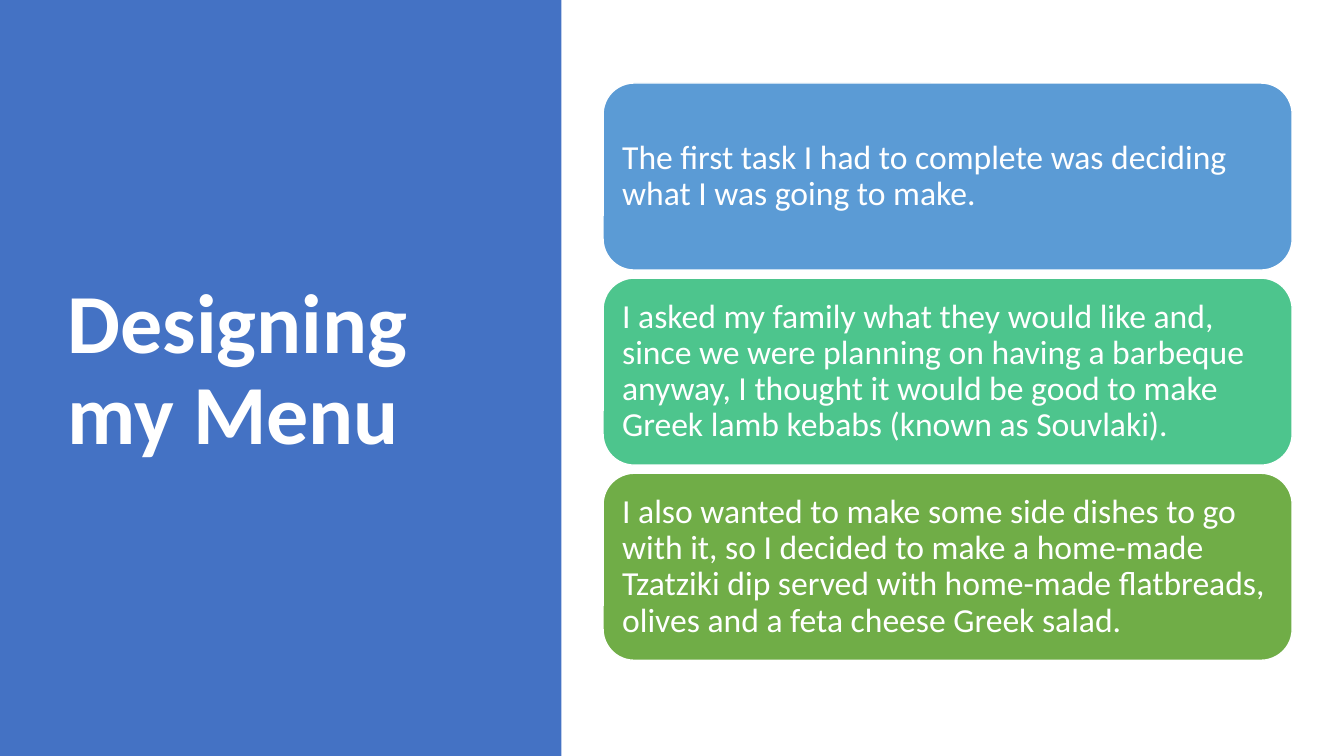
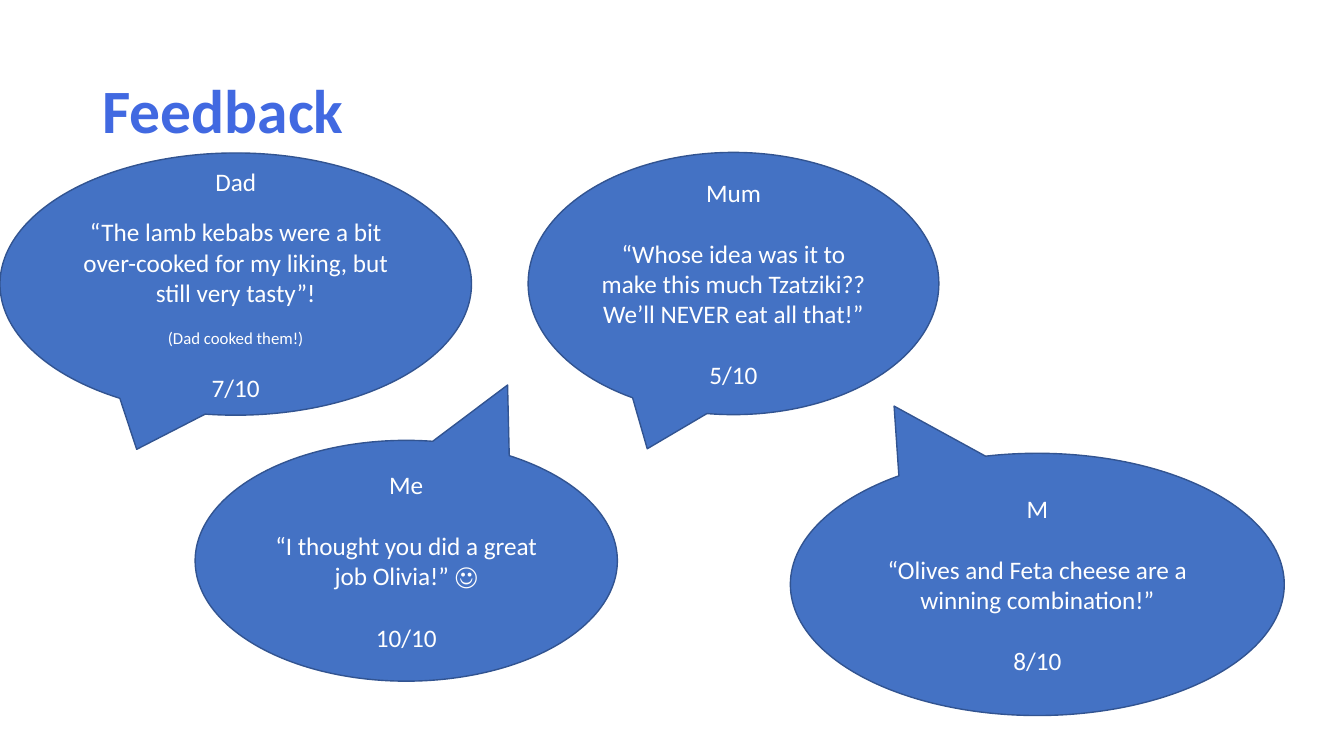
from pptx import Presentation
from pptx.dml.color import RGBColor
from pptx.enum.shapes import MSO_SHAPE
from pptx.enum.text import MSO_ANCHOR, PP_ALIGN
from pptx.util import Pt

BLUE = RGBColor(0x44, 0x72, 0xC4)
DARK_BLUE = RGBColor(0x32, 0x54, 0x91)
ROYAL_BLUE = RGBColor(0x41, 0x69, 0xE1)
SKY = RGBColor(0x5B, 0x9B, 0xD5)
MINT = RGBColor(0x4D, 0xC5, 0x8D)
GREEN = RGBColor(0x70, 0xAD, 0x47)
WHITE = RGBColor(0xFF, 0xFF, 0xFF)
FONT = "Calibri"
SLIDE_WIDTH, SLIDE_HEIGHT = 960, 540

MENU_STEPS = [
    ("The first task I had to complete was deciding what I was going to make.", SKY),
    ("I asked my family what they would like and, since we were planning on having "
     "a barbeque anyway, I thought it would be good to make Greek lamb kebabs "
     "(known as Souvlaki).", MINT),
    ("I also wanted to make some side dishes to go with it, so I decided to make a "
     "home-made Tzatziki dip served with home-made flatbreads, olives and a feta "
     "cheese Greek salad.", GREEN),
]
STEP_LEFT, STEP_TOP, STEP_WIDTH, STEP_HEIGHT, STEP_GAP = 430.8, 59.3, 492.2, 133.6, 5.76

BODY_SIZE, NOTE_SIZE = 18, 12
LINE_GAP, NOTE_GAP, SCORE_GAP = 22, 14.65, 17.1
TAIL_DOWN = (-0.21, 0.63)

FEEDBACK = [
    {"box": (377.3, 108.9, 293.4, 187.3), "tail": TAIL_DOWN, "lines": [
        ("Mum", BODY_SIZE, 0),
        ("“Whose idea was it to make this much Tzatziki?? We’ll NEVER eat all that!”",
         BODY_SIZE, LINE_GAP),
        ("5/10", BODY_SIZE, LINE_GAP)]},
    {"box": (139.4, 314.6, 301.6, 172), "tail": (0.24, -0.73), "lines": [
        ("Me", BODY_SIZE, 0),
        ("“I thought you did a great job Olivia!” ☺", BODY_SIZE, LINE_GAP),
        ("10/10", BODY_SIZE, LINE_GAP)]},
    {"box": (0, 109.3, 336.8, 187.3), "tail": TAIL_DOWN, "lines": [
        ("Dad", BODY_SIZE, 0),
        ("“The lamb kebabs were a bit over-cooked for my liking, but still very tasty”!",
         BODY_SIZE, NOTE_GAP),
        ("(Dad cooked them!)", NOTE_SIZE, NOTE_GAP),
        ("7/10", BODY_SIZE, SCORE_GAP)]},
    {"box": (564.6, 323.8, 352.8, 187.3), "tail": (-0.29, -0.68), "lines": [
        ("M", BODY_SIZE, 0),
        ("“Olives and Feta cheese are a winning combination!”", BODY_SIZE, LINE_GAP),
        ("8/10", BODY_SIZE, LINE_GAP)]},
]


def write(paragraph, text, size=BODY_SIZE, color=WHITE, bold=False,
          align=PP_ALIGN.LEFT, spacing=1.0, before=0):
    paragraph.alignment = align
    paragraph.line_spacing = spacing
    paragraph.space_before = Pt(before)
    run = paragraph.add_run()
    run.text = text
    run.font.name = FONT
    run.font.size = Pt(size)
    run.font.bold = bold
    run.font.color.rgb = color


def prepare_frame(holder, inset=None):
    frame = holder.text_frame
    frame.word_wrap = True
    frame.vertical_anchor = MSO_ANCHOR.MIDDLE
    if inset is not None:
        frame.margin_left = frame.margin_right = Pt(inset)
        frame.margin_top = frame.margin_bottom = Pt(inset)
    return frame


def add_title(slide, text, box, size, color):
    frame = prepare_frame(slide.shapes.add_textbox(*map(Pt, box)))
    write(frame.paragraphs[0], text, size=size, color=color, bold=True, spacing=0.9)


def add_panel(slide, kind, box, fill, outline=None):
    panel = slide.shapes.add_shape(kind, *map(Pt, box))
    panel.shadow.inherit = False
    panel.fill.solid()
    panel.fill.fore_color.rgb = fill
    if outline is None:
        panel.line.fill.background()
    else:
        panel.line.color.rgb = outline
        panel.line.width = Pt(1)
    return panel


def build_menu(slide):
    add_panel(slide, MSO_SHAPE.RECTANGLE, (0, 0, 401, SLIDE_HEIGHT), BLUE)
    add_title(slide, "Designing my Menu", (41.2, 49, 299.5, 433.4), 60, WHITE)
    for index, (text, fill) in enumerate(MENU_STEPS):
        top = STEP_TOP + index * (STEP_HEIGHT + STEP_GAP)
        step = add_panel(slide, MSO_SHAPE.ROUNDED_RECTANGLE,
                         (STEP_LEFT, top, STEP_WIDTH, STEP_HEIGHT), fill, WHITE)
        write(prepare_frame(step, inset=7.2).paragraphs[0], text, size=24, spacing=0.9)


def build_feedback(slide):
    add_title(slide, "Feedback", (66, 28.8, 828, 104.4), 44, ROYAL_BLUE)
    for opinion in FEEDBACK:
        bubble = add_panel(slide, MSO_SHAPE.OVAL_CALLOUT, opinion["box"], BLUE, DARK_BLUE)
        bubble.adjustments[0], bubble.adjustments[1] = opinion["tail"]
        frame = prepare_frame(bubble)
        for index, (text, size, before) in enumerate(opinion["lines"]):
            paragraph = frame.add_paragraph() if index else frame.paragraphs[0]
            write(paragraph, text, size=size, align=PP_ALIGN.CENTER, before=before)


def main():
    deck = Presentation()
    deck.slide_width, deck.slide_height = Pt(SLIDE_WIDTH), Pt(SLIDE_HEIGHT)
    blank = deck.slide_layouts[6]
    for build in (build_menu, build_feedback):
        build(deck.slides.add_slide(blank))
    deck.save("out.pptx")


if __name__ == "__main__":
    main()
